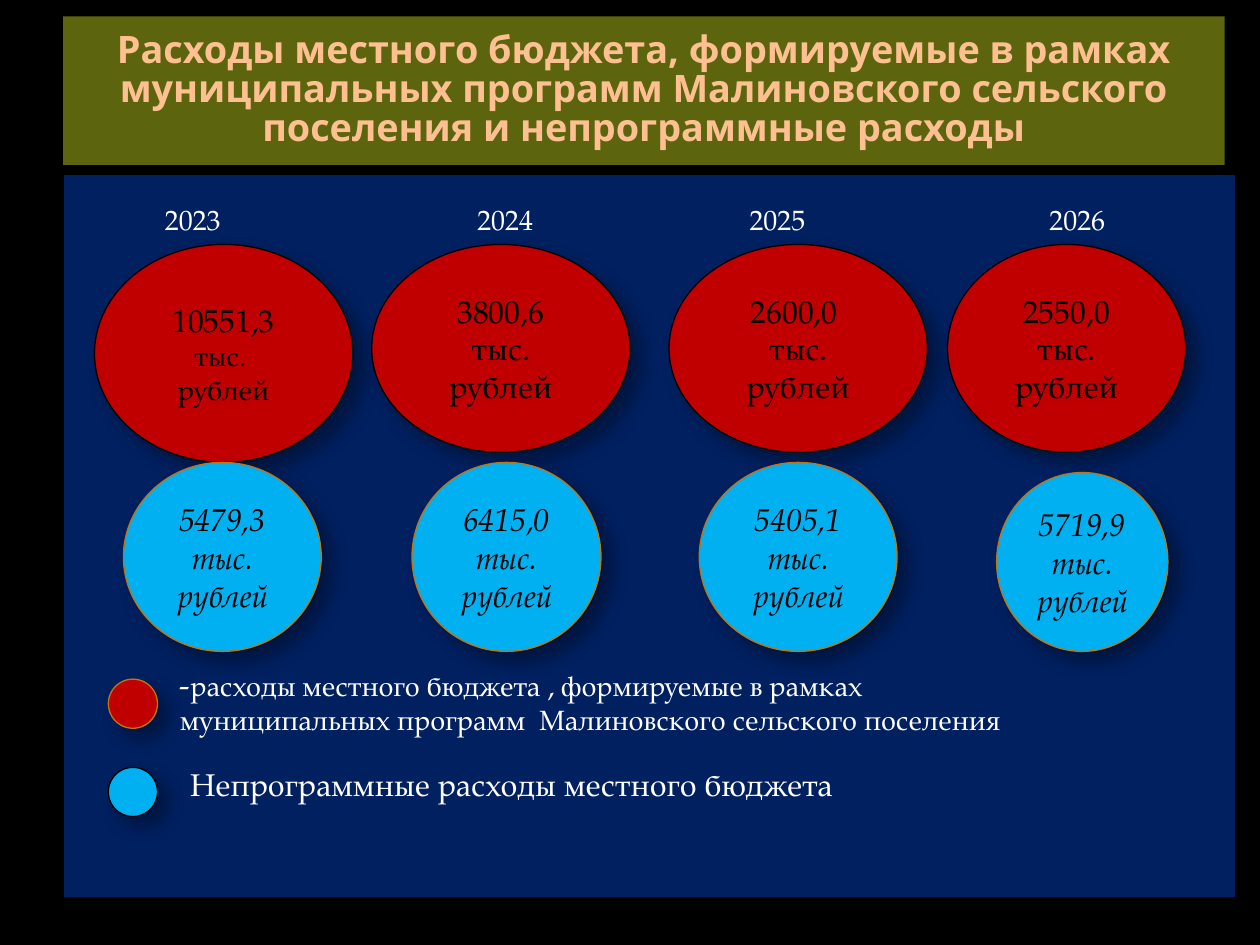
import pptx
import pptx.util
import pptx.dml.color
import pptx.enum.shapes
import pptx.enum.text
import pptx.oxml
import pptx.oxml.ns

theme = {
    "background": "000000", "banner": "5C650D", "heading": "FFC091",
    "panel": "002060", "program": "C00000", "other": "00B0F0",
    "dark": "000000", "light": "FFFFFF", "rim": "C07512",
    "heading_font": "Open Sans", "body_font": "TeX Gyre Pagella",
    "heading_size": 21.6, "large": 18, "small": 16,
}
SHADOW = (
    f'<a:effectLst {pptx.oxml.ns.nsdecls("a")}>'
    '<a:outerShdw blurRad="129540" dist="101600" dir="2700000" rotWithShape="0">'
    f'<a:srgbClr val="{theme["dark"]}"><a:alpha val="35000"/></a:srgbClr>'
    '</a:outerShdw></a:effectLst>'
)

presentation = pptx.Presentation()
presentation.slide_width = pptx.util.Inches(10)
presentation.slide_height = pptx.util.Inches(7.5)
column = presentation.slide_width / 100
row = presentation.slide_height / 75
slide = presentation.slides.add_slide(presentation.slide_layouts[6])
slide.background.fill.solid()
slide.background.fill.fore_color.rgb = pptx.dml.color.RGBColor.from_string(theme["background"])


def add_figure(kind, left, top, width, height, fill, line=None):
    shape = slide.shapes.add_shape(
        kind, round(left * column), round(top * row), round(width * column), round(height * row))
    shape.fill.solid()
    shape.fill.fore_color.rgb = pptx.dml.color.RGBColor.from_string(theme[fill])
    shape.shadow.inherit = False
    if line is None:
        shape.line.fill.background()
    else:
        shape.line.color.rgb = pptx.dml.color.RGBColor.from_string(theme[line])
        shape.line.width = pptx.util.Pt(0.75)
        properties = shape._element.spPr
        properties.remove(properties.find(pptx.oxml.ns.qn("a:effectLst")))
        properties.append(pptx.oxml.parse_xml(SHADOW))
    return shape


def write(shape, lines, color, font="body_font", align="CENTER", anchor="MIDDLE", italic=False, bold=False):
    frame = shape.text_frame
    frame.word_wrap = True
    frame.vertical_anchor = pptx.enum.text.MSO_ANCHOR[anchor]
    for index, pieces in enumerate(lines):
        paragraph = frame.add_paragraph() if index else frame.paragraphs[0]
        paragraph.alignment = pptx.enum.text.PP_ALIGN[align]
        for text, size in pieces:
            run = paragraph.add_run()
            run.text = text
            run.font.name = theme[font]
            run.font.size = pptx.util.Pt(theme[size])
            run.font.bold = bold
            run.font.italic = italic
            run.font.color.rgb = pptx.dml.color.RGBColor.from_string(theme[color])
    return frame


rectangle = pptx.enum.shapes.MSO_SHAPE.RECTANGLE
oval = pptx.enum.shapes.MSO_SHAPE.OVAL

banner = add_figure(rectangle, 5, 1.3, 92.2, 11.8, "banner")
heading = write(banner, [[(
    "Расходы местного бюджета, формируемые в рамках муниципальных программ "
    "Малиновского сельского поселения и непрограммные расходы", "heading_size")]],
    "heading", font="heading_font", bold=True)
heading.paragraphs[0].line_spacing = 0.87

panel = add_figure(rectangle, 5.1, 13.9, 92.9, 57.3, "panel")
years = write(panel, [[("\t2023\t2024\t2025\t2026", "small")]], "light", align="LEFT", anchor="TOP")
years.margin_top = round(2.2 * row)
paragraph_properties = years.paragraphs[0]._p.get_or_add_pPr()
tabs = pptx.oxml.parse_xml(f'<a:tabLst {pptx.oxml.ns.nsdecls("a")}/>')
for stop in (7, 31.8, 53.4, 77.2):
    tab = tabs.makeelement(pptx.oxml.ns.qn("a:tab"), {"pos": str(round(stop * column)), "algn": "l"})
    tabs.append(tab)
paragraph_properties.append(tabs)

program_top = 19.4
program_ovals = [
    (7.5, 20.5, 17.3, [[("10551,3", "large")], [("тыс. ", "small")], [("рублей", "small")]]),
    (29.5, 20.5, 16.5, [[("3800,6", "large")], [("тыс. рублей", "large")]]),
    (53.1, 20.5, 16.5, [[("2600,0 ", "large")], [("тыс. рублей", "large")]]),
    (75.2, 18.9, 16.5, [[("2550,0", "large")], [("тыс. рублей", "large")]]),
]
for left, width, height, lines in program_ovals:
    write(add_figure(oval, left, program_top, width, height, "program", "dark"), lines, "dark")

other_bottom = 51.7
other_ovals = [
    (9.8, 15.7, 15, "5479,3"),
    (32.7, 15, 15, "6415,0"),
    (55.5, 15.7, 15, "5405,1"),
    (79.1, 13.6, 14.2, "5719,9"),
]
for left, width, height, amount in other_ovals:
    shape = add_figure(oval, left, other_bottom - height, width, height, "other", "rim")
    write(shape, [[(amount, "large")], [("тыс. рублей", "large")]], "dark", italic=True)

legend = [
    (53.9, "program", "rim", (13.3, 52.3, 72.9, 6.7), [
        ("-", "large"),
        ("расходы местного бюджета , формируемые в рамках муниципальных программ  "
         "Малиновского сельского поселения", "small")]),
    (60.9, "other", "dark", (14.1, 60.2, 68.8, 4),
     [("Непрограммные расходы местного бюджета", "large")]),
]
for top, fill, line, (left, text_top, width, height), pieces in legend:
    add_figure(oval, 8.6, top, 3.9, 3.9, fill, line)
    label = slide.shapes.add_textbox(
        round(left * column), round(text_top * row), round(width * column), round(height * row))
    write(label, [pieces], "light", align="LEFT", anchor="TOP")

presentation.save("out.pptx")
